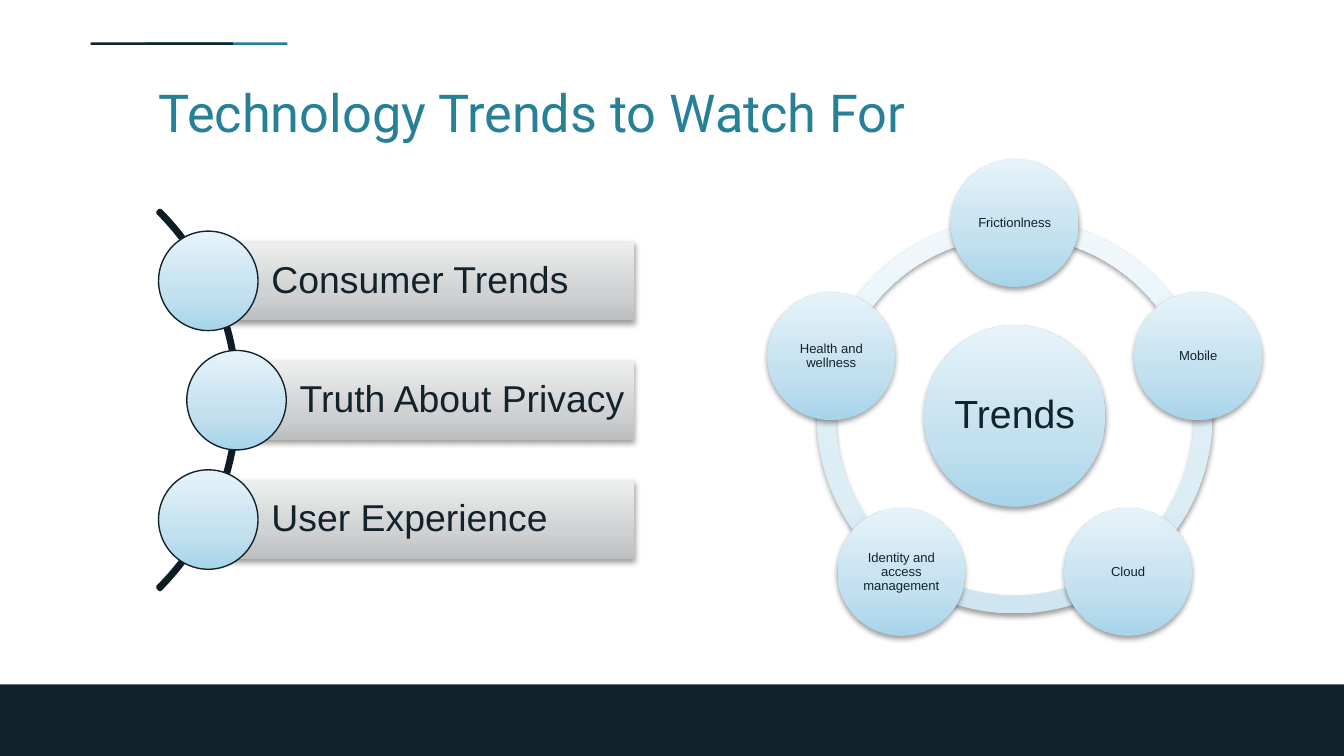
from copy import deepcopy
from dataclasses import dataclass
from math import cos, radians, sin

from lxml.etree import SubElement
from pptx import Presentation
from pptx.dml.color import RGBColor
from pptx.enum.shapes import MSO_SHAPE
from pptx.enum.text import MSO_ANCHOR, MSO_AUTO_SIZE, PP_ALIGN
from pptx.oxml.ns import qn
from pptx.util import Inches, Pt


@dataclass(frozen=True)
class Theme:
    navy: str = "13232C"
    teal: str = "268098"
    curve: str = "0F1C23"
    node: tuple = ("A7D4EA", "C2E0EF", "E7F3FA")
    ring: tuple = ("CFE6F2", "DDEDF5", "F1F8FC")
    bar: tuple = ("BCBEBF", "D0D1D2", "EDEEEE")
    heading_font: str = "Roboto"
    body_font: str = "Arial"
    heading: int = 28
    hub: int = 21
    item: int = 20
    label: int = 7


theme = Theme()
deck = Presentation()
deck.slide_width = Inches(10)
deck.slide_height = deck.slide_width * 9 // 16
slide = deck.slides.add_slide(deck.slide_layouts[5])
unit = deck.slide_width / 100  # one grid column, also one grid row


def add_part(kind, left, top, width, height, colours=(), shadow=False):
    """Place a shape on the grid; one colour is solid, three run bottom to top."""
    part = slide.shapes.add_shape(kind, *(round(n * unit) for n in (left, top, width, height)))
    part.shadow.inherit = False
    part.line.fill.background()
    if len(colours) == 1:
        part.fill.solid()
        part.fill.fore_color.rgb = RGBColor.from_string(colours[0])
    elif colours:
        part.fill.gradient()
        part.fill.gradient_angle = 90
        stop_list = part.element.spPr.find(qn("a:gradFill")).find(qn("a:gsLst"))
        stop_list.insert(1, deepcopy(stop_list[0]))
        for stop, position, colour in zip(part.fill.gradient_stops, (0, 0.35, 1), colours):
            stop.position = position
            stop.color.rgb = RGBColor.from_string(colour)
    else:
        part.fill.background()
    if shadow:
        effects = part.element.spPr.find(qn("a:effectLst"))
        outer = SubElement(effects, qn("a:outerShdw"), blurRad=str(Pt(3.1)),
                           dist=str(Pt(1.6)), dir="5400000", rotWithShape="0")
        black = SubElement(outer, qn("a:srgbClr"), val="000000")
        SubElement(black, qn("a:alpha"), val="38000")
    return part


def write(part, words, size, colour, font, insets, align, anchor=MSO_ANCHOR.MIDDLE, spacing=0.9):
    frame = part.text_frame
    frame.word_wrap = True
    frame.auto_size = MSO_AUTO_SIZE.NONE
    frame.vertical_anchor = anchor
    frame.margin_left, frame.margin_top, frame.margin_right, frame.margin_bottom = (
        Inches(inset) for inset in insets)
    paragraph = frame.paragraphs[0]
    paragraph.alignment = align
    paragraph.line_spacing = spacing
    run = paragraph.add_run()
    run.text = words
    run.font.size = Pt(size)
    run.font.name = font
    run.font.color.rgb = RGBColor.from_string(colour)


# Footer band and accent line
add_part(MSO_SHAPE.RECTANGLE, 0, 50.92, 100, 5.33, [theme.navy])
for left, colour in ((10.8, theme.teal), (6.75, theme.navy)):
    add_part(MSO_SHAPE.RECTANGLE, left, 3.15, 10.6, 0.2, [colour])

# Ring of trends: arcs join neighbouring nodes around the hub
trends = ["Frictionlness", "Mobile", "Cloud", "Identity and access management", "Health and wellness"]
hub_x, hub_y, orbit = 75.5, 30.95, 14.35
ring_size, hub_size, node_size = 29.4, 13.5, 9.5
step = 360 / len(trends)
angles = [(270 + step * i) % 360 for i in range(len(trends))]

for angle in angles:
    arc = add_part(MSO_SHAPE.BLOCK_ARC, hub_x - ring_size / 2, hub_y - ring_size / 2,
                   ring_size, ring_size, theme.ring, shadow=True)
    # Angles are stored in 1/60000 degree, adjustments in 1/100000
    arc.adjustments[0] = angle * 0.6
    arc.adjustments[1] = (angle + step) % 360 * 0.6
    arc.adjustments[2] = 0.046

hub = add_part(MSO_SHAPE.OVAL, hub_x - hub_size / 2, hub_y - hub_size / 2,
               hub_size, hub_size, theme.node, shadow=True)
write(hub, "Trends", theme.hub, theme.navy, theme.body_font, [0] * 4, PP_ALIGN.CENTER)

for trend, angle in zip(trends, angles):
    node = add_part(MSO_SHAPE.OVAL, hub_x + orbit * cos(radians(angle)) - node_size / 2,
                    hub_y + orbit * sin(radians(angle)) - node_size / 2,
                    node_size, node_size, theme.node, shadow=True)
    write(node, trend, theme.label, theme.navy, theme.body_font, [0.01] * 4, PP_ALIGN.CENTER)

# Title
title = slide.shapes.title
title.left, title.top, title.width, title.height = (
    round(n * unit) for n in (10.8, 4.95, 93.2, 6.3))
write(title, "Technology Trends to Watch For", theme.heading, theme.teal, theme.heading_font,
      [0.1] * 4, PP_ALIGN.LEFT, MSO_ANCHOR.TOP, 1)

# Curved list: a thin arc with a bar and a dot for each topic
curve = add_part(MSO_SHAPE.BLOCK_ARC, -22.15, 9.8, 39.9, 39.9)
for i, value in enumerate((315 * 0.6, 45 * 0.6, 0.006)):
    curve.adjustments[i] = value
curve.line.color.rgb = RGBColor.from_string(theme.curve)
curve.line.width = Pt(2)

bar_right, bar_height, dot_size = 47.2, 5.9, 7.4
topics = [("Consumer Trends", 15.5), ("Truth About Privacy", 17.6), ("User Experience", 15.5)]
for i, (topic, dot_x) in enumerate(topics):
    dot_y = 20.9 + 8.88 * i
    bar = add_part(MSO_SHAPE.RECTANGLE, dot_x, dot_y - bar_height / 2,
                   bar_right - dot_x, bar_height, theme.bar, shadow=True)
    write(bar, topic, theme.item, theme.navy, theme.body_font,
          (0.47, 0.06, 0.06, 0.06), PP_ALIGN.LEFT)
    dot = add_part(MSO_SHAPE.OVAL, dot_x - dot_size / 2, dot_y - dot_size / 2,
                   dot_size, dot_size, theme.node)
    dot.line.color.rgb = RGBColor.from_string(theme.navy)
    dot.line.width = Pt(0.75)

deck.save("out.pptx")
